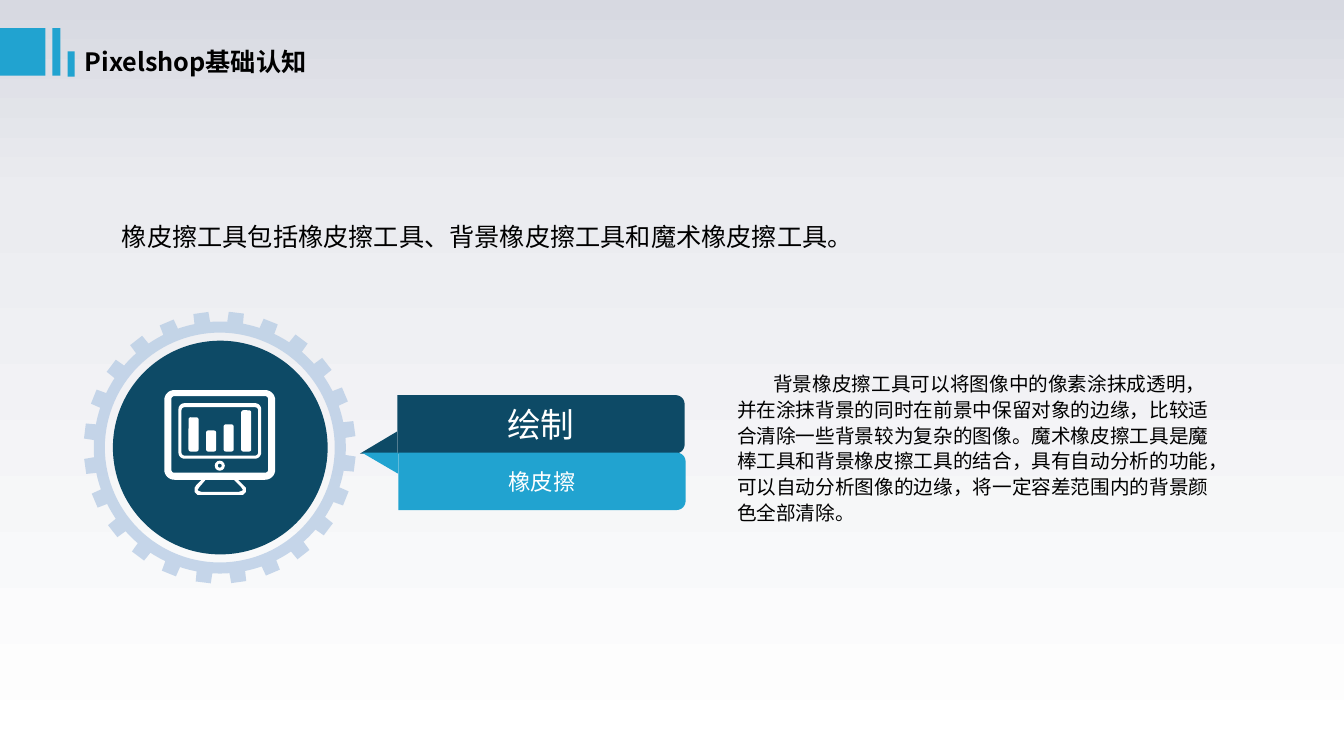
import copy
import math
from dataclasses import dataclass

import pptx
import pptx.dml.color
import pptx.enum.shapes
import pptx.enum.text
import pptx.oxml.ns
import pptx.util
from lxml import etree

SHAPE = pptx.enum.shapes.MSO_SHAPE
ALIGN = pptx.enum.text.PP_ALIGN
CELL = pptx.util.Inches(0.01)


@dataclass(frozen=True)
class Theme:
    """Colours, font and type sizes of the slide."""
    navy: str = "0D4A66"
    sky: str = "21A3D0"
    gear: str = "B9CDE5"
    white: str = "FFFFFF"
    black: str = "000000"
    backdrop: tuple = ((0, "D7D9E1"), (0.26, "EBECF0"), (1, "FFFFFF"))
    font: str = "Noto Sans CJK SC"
    heading: int = 18
    panel: int = 24
    label: int = 16
    body: int = 14


@dataclass(frozen=True)
class Box:
    """A rectangle counted in grid columns and rows."""
    left: float
    top: float
    width: float
    height: float

    def inner(self, column, row, width, height):
        """Return a box placed from this box's top left corner."""
        return Box(self.left + column, self.top + row, width, height)

    def points(self, pairs):
        """Move column and row pairs onto the slide."""
        return [(self.left + column, self.top + row) for column, row in pairs]

    def lengths(self):
        """Return the four lengths for python-pptx."""
        return [round(v * CELL) for v in (self.left, self.top, self.width, self.height)]


THEME = Theme()


def rgb(colour):
    """Turn a hexadecimal string into a colour."""
    return pptx.dml.color.RGBColor.from_string(colour)


def paint(shape, colour):
    """Give a shape a flat fill without line or shadow."""
    shape.shadow.inherit = False
    shape.fill.solid()
    shape.fill.fore_color.rgb = rgb(colour)
    shape.line.fill.background()
    return shape


def preset(shapes, kind, box, colour, adjustment=None):
    """Add a flat preset shape."""
    shape = paint(shapes.add_shape(kind, *box.lengths()), colour)
    if adjustment is not None:
        shape.adjustments[0] = adjustment
    return shape


def outline(shapes, contours, colour):
    """Add a freeform made of closed contours."""
    scaled = [[(x * CELL, y * CELL) for x, y in contour] for contour in contours]
    builder = shapes.build_freeform(*scaled[0][0], scale=1.0)
    for number, contour in enumerate(scaled):
        if number:
            builder.move_to(*contour[0])
        builder.add_line_segments(contour[1:], close=True)
    return paint(builder.convert_to_shape(), colour)


def rounded(box, radii):
    """List the points of a box with four corner radii, clockwise from top left."""
    points = []
    for corner, radius in enumerate(radii):
        right, bottom = corner in (1, 2), corner in (2, 3)
        x = box.left + (box.width - radius if right else radius)
        y = box.top + (box.height - radius if bottom else radius)
        for step in range(9 if radius else 1):
            angle = math.radians(180 + 90 * corner + 90 * step / 8)
            points.append((x + radius * math.cos(angle), y + radius * math.sin(angle)))
    return points


def write(shape, text, size, colour, bold=False, wrap=True):
    """Set and format the single paragraph of a shape."""
    frame = shape.text_frame
    frame.text = text
    frame.word_wrap = wrap
    paragraph = frame.paragraphs[0]
    font = paragraph.runs[0].font
    font.size, font.bold, font.name = pptx.util.Pt(size), bold, THEME.font
    font.color.rgb = rgb(colour)
    east_asian = etree.SubElement(paragraph.runs[0]._r.rPr, pptx.oxml.ns.qn("a:ea"))
    east_asian.set("typeface", THEME.font)
    return paragraph


def heading(slide, box, text, bold=False, wrap=True):
    """Add a heading line in a box that grows with its text."""
    shape = slide.shapes.add_textbox(*box.lengths())
    write(shape, text, THEME.heading, THEME.black, bold, wrap)
    shape.text_frame.auto_size = pptx.enum.text.MSO_AUTO_SIZE.SHAPE_TO_FIT_TEXT


def backdrop(slide):
    """Fill the background with a downward gradient."""
    fill = slide.background.fill
    fill.gradient()
    fill.gradient_angle = 270
    stops = slide.element.xpath(".//p:bg//a:gsLst")[0]
    stops.insert(1, copy.deepcopy(stops[0]))
    for stop, (position, colour) in zip(fill.gradient_stops, THEME.backdrop):
        stop.position = position
        stop.color.rgb = rgb(colour)


def header(slide, box):
    """Draw the three title blocks and the title."""
    shapes = slide.shapes.add_group_shape().shapes
    for block in ((0, 0, 45, 47), (52, 0, 8, 47), (67, 23, 7, 25)):
        preset(shapes, SHAPE.RECTANGLE, box.inner(*block), THEME.sky)
    heading(slide, box.inner(74, 13, 271, 40), "Pixelshop基础认知", bold=True)


def panel(shapes, box, pointer, text, size, colour):
    """Draw a label panel and the pointer at its left side."""
    outline(shapes, [box.points(pointer)], colour)
    shape = outline(shapes, [rounded(box, (0, 9, 9, 0))], colour)
    paragraph = write(shape, text, size, THEME.white, wrap=False)
    paragraph.alignment = ALIGN.CENTER
    shape.text_frame.vertical_anchor = pptx.enum.text.MSO_ANCHOR.MIDDLE


def gear(shapes, box, teeth=24):
    """Draw a toothed ring around a disc."""
    middle = box.width / 2

    def polar(radius, degrees):
        angle = math.radians(degrees)
        return middle + radius * math.cos(angle), middle + radius * math.sin(angle)

    pitch = 360 / teeth
    rim = []
    for tooth in range(teeth):
        centre = 7 + tooth * pitch
        rim += [polar(125, centre - 3.6), polar(135, centre - 3.2),
                polar(135, centre + 3.2), polar(125, centre + 3.6)]
        rim += [polar(125, centre + 3.6 + 7.8 * step / 4) for step in range(1, 4)]
    hole = [polar(114, 3 * step) for step in range(120)]
    ring = outline(shapes, [box.points(rim), box.points(hole)], THEME.gear)
    colour = ring.element.xpath("./p:spPr/a:solidFill/a:srgbClr")[0]
    etree.SubElement(colour, pptx.oxml.ns.qn("a:alpha")).set("val", "80000")
    preset(shapes, SHAPE.OVAL, box.inner(29, 29, 213, 212), THEME.navy)


def monitor(shapes, box):
    """Draw a monitor with a bar chart on its screen."""
    stand = [(37, 89), (32, 94), (30, 97), (30, 101), (33, 104), (37, 104),
             (74, 104), (78, 104), (81, 101), (81, 97), (78, 94), (73, 89)]
    stand_hole = [(41, 89), (35, 96), (33, 99), (34, 100), (37, 101),
                  (74, 101), (77, 100), (78, 99), (76, 96), (69, 89)]
    case = [rounded(box.inner(0, 0, 110, 89), (10,) * 4),
            rounded(box.inner(7, 6, 96, 76), (3,) * 4)]
    screen = [rounded(box.inner(14, 13, 82, 55), (6,) * 4),
              rounded(box.inner(17, 17, 76, 48), (3,) * 4)]
    outline(shapes, case + [box.points(stand), box.points(stand_hole)], THEME.white)
    outline(shapes, screen, THEME.white)
    preset(shapes, SHAPE.DONUT, box.inner(50, 70, 10, 10), THEME.white, 0.3)
    for number, height in enumerate((34, 21, 27, 41)):
        bar = box.inner(24 + 17.4 * number, 61 - height, 10, height)
        preset(shapes, SHAPE.ROUNDED_RECTANGLE, bar, THEME.white, 0.22)


def description(shapes, box):
    """Write the explanation with an indented first line."""
    shape = shapes.add_textbox(*box.lengths())
    text = ("背景橡皮擦工具可以将图像中的像素涂抹成透明，并在涂抹背景的同时在前景中保留对象的边缘，"
            "比较适合清除一些背景较为复杂的图像。魔术橡皮擦工具是魔棒工具和背景橡皮擦工具的结合，"
            "具有自动分析的功能，可以自动分析图像的边缘，将一定容差范围内的背景颜色全部清除。")
    paragraph = write(shape, text, THEME.body, THEME.black)
    paragraph.line_spacing = 1.1
    paragraph._p.get_or_add_pPr().set("indent", str(36 * CELL))
    frame = shape.text_frame
    frame.vertical_anchor = pptx.enum.text.MSO_ANCHOR.MIDDLE
    frame.margin_left = 52 * CELL
    frame.margin_top = frame.margin_right = frame.margin_bottom = 0


def diagram(slide, box):
    """Draw the gear, its two labels and the explanation."""
    shapes = slide.shapes.add_group_shape().shapes
    panel(shapes, box.inner(311, 83, 285, 58), [(0, 36), (0, 58), (-37, 58)],
          "绘制", THEME.panel, THEME.navy)
    panel(shapes, box.inner(312, 140, 285, 57), [(0, 0), (0, 21), (-36, 0)],
          "橡皮擦", THEME.label, THEME.sky)
    gear(shapes, box.inner(0, 0, 270, 270))
    monitor(shapes, box.inner(80, 78, 110, 104))
    description(shapes, box.inner(596, 52, 531, 165))


def main():
    """Build the slide and save it."""
    presentation = pptx.Presentation()
    presentation.slide_width, presentation.slide_height = 1333 * CELL, 750 * CELL
    slide = presentation.slides.add_slide(presentation.slide_layouts[6])
    backdrop(slide)
    diagram(slide, Box(83, 309, 1127, 270))
    heading(slide, Box(111, 215, 745, 40),
            "橡皮擦工具包括橡皮擦工具、背景橡皮擦工具和魔术橡皮擦工具。", wrap=False)
    header(slide, Box(0, 28, 345, 53))
    presentation.save("out.pptx")


if __name__ == "__main__":
    main()
